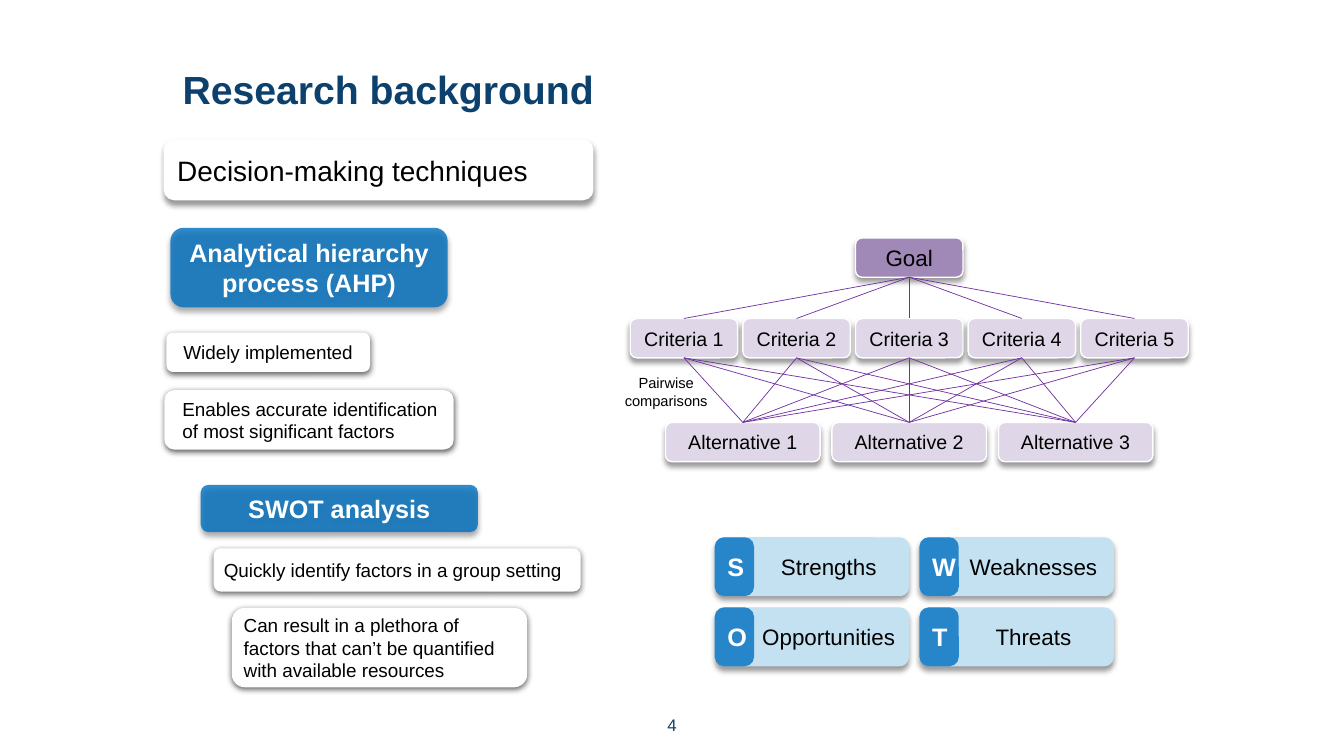
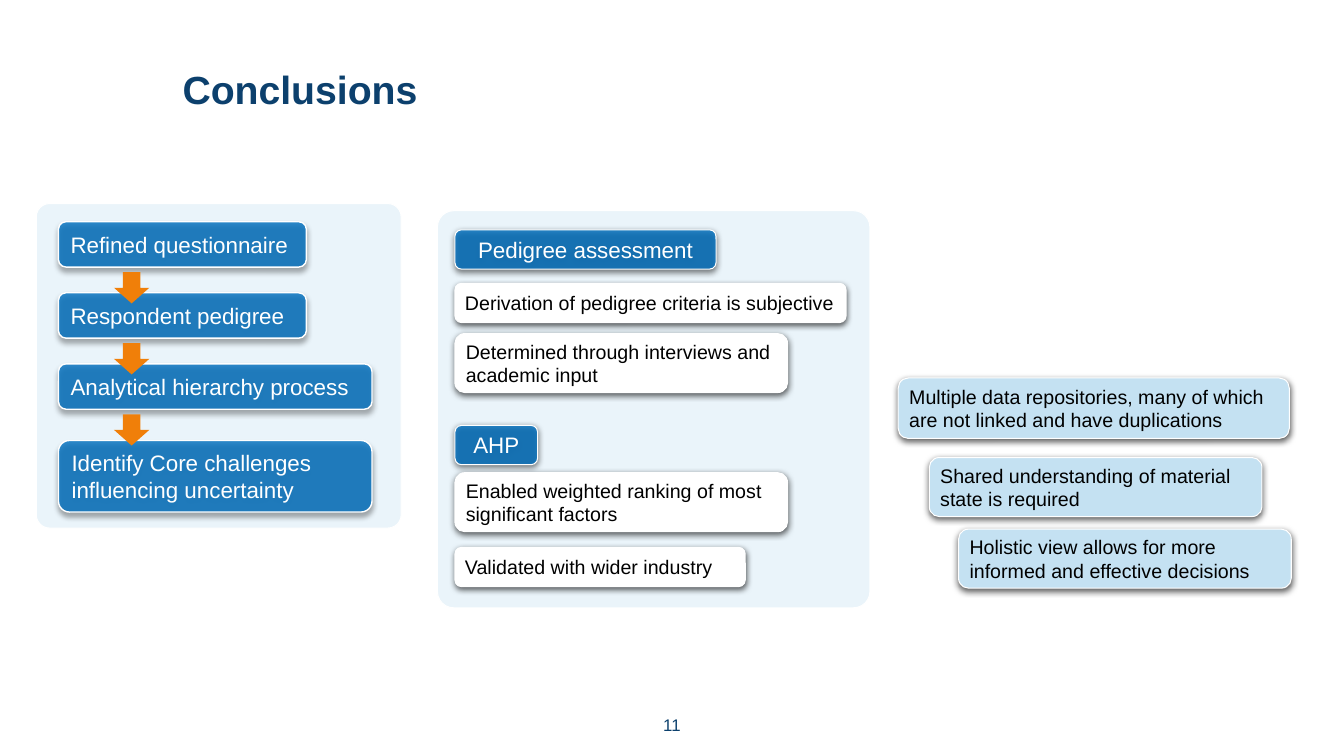
"""Build two slides on decision-making techniques; places are percentages of the slide's size."""
from itertools import product

from lxml import etree
from pptx import Presentation
from pptx import util as u
from pptx.dml.color import RGBColor
from pptx.enum import shapes, text
from pptx.oxml.ns import qn

NAVY, BLUE, PALE_BLUE, PANEL_BLUE = "0C406D", "0070C0", "C4E1F2", "EAF4FA"
PURPLE, MAUVE, LILAC = "7030A0", "A088B7", "DFD7E7"
ORANGE, WHITE, BLACK = "F07F09", "FFFFFF", "000000"
LEFT, CENTRE = text.PP_ALIGN.LEFT, text.PP_ALIGN.CENTER
ROUND, ARROW = shapes.MSO_SHAPE.ROUNDED_RECTANGLE, shapes.MSO_SHAPE.DOWN_ARROW

DEEP = {"alpha": 40, "blur": 4, "distance": 3}
CLOSE = {"alpha": 63, "blur": 4.5, "distance": 1.5}
INSETS = (0.1, 0.05, 0.1, 0.05)
NARROW = (0.08, 0.04, 0.08, 0.04)

TITLE = {"kind": "title", "size": 28, "color": NAVY, "bold": True, "align": LEFT, "spacing": 0.9}
NUMBER = {"kind": "text", "size": 12, "color": NAVY}
WHITE_BOX = {"fill": WHITE, "align": LEFT}
HEADING = WHITE_BOX | {"line": 1, "shadow": DEEP, "size": 20}
CAPTION = {"fill": WHITE, "line": 1, "size": 10.5}
TECHNIQUE = {"fill": BLUE, "opacity": 80, "shadow": DEEP, "size": 18, "color": WHITE, "bold": True}
POINT = WHITE_BOX | {"shadow": CLOSE, "size": 13.5, "insets": (0.15, 0.03, 0.03, 0.03)}
SWOT_POINT = POINT | {"insets": (0.08, 0.03, 0.08, 0.03)}
NODE = {"fill": LILAC, "line": 1, "shadow": DEEP, "size": 14}
GOAL = NODE | {"fill": MAUVE, "size": 16}
SWOT_CARD = {"fill": PALE_BLUE, "shadow": DEEP, "size": 16, "insets": (0.43, 0.05, 0.1, 0.05)}
SWOT_LETTER = TECHNIQUE | {"shadow": None, "corner": 0.239}
PANEL = {"fill": PANEL_BLUE, "line": 0.75, "corner": 0.041}
FINDING = WHITE_BOX | {"line": 0.75, "shadow": CLOSE, "size": 14, "insets": NARROW}
OUTCOME = FINDING | {"fill": PALE_BLUE}
TOPIC = FINDING | {"fill": BLUE, "opacity": 80, "size": 16, "color": WHITE, "align": CENTRE}
STEP = TECHNIQUE | {"line": 1, "size": 16, "bold": False, "align": LEFT}
LAST_STEP = STEP | {"corner": 0.153}
STEP_ARROW = {"kind": ARROW, "fill": ORANGE}

presentation = Presentation()
presentation.slide_width, presentation.slide_height = u.Inches(13.333), u.Inches(7.5)
COLUMN, ROW = presentation.slide_width / 100, presentation.slide_height / 100


def paint(fill, color):
    """Give a shape, line or font fill one solid colour."""
    fill.solid()
    fill.fore_color.rgb = RGBColor.from_string(color)


def add(slide, place, style, words=""):
    """Place one title, text box or shape and dress it in a style."""
    kind = style.get("kind", ROUND)
    if kind == "title":
        shape = slide.shapes.title
    elif kind == "text":
        shape = slide.shapes.add_textbox(0, 0, 0, 0)
    else:
        shape = slide.shapes.add_shape(kind, 0, 0, 0, 0)
        shape.shadow.inherit = False
        paint(shape.fill, style["fill"])
        if "opacity" in style:
            color = shape.fill._xPr.find(".//" + qn("a:srgbClr"))
            etree.SubElement(color, qn("a:alpha"), val=str(style["opacity"] * 1000))
        if "line" in style:
            paint(shape.line.fill, WHITE)
            shape.line.width = u.Pt(style["line"])
        else:
            shape.line.fill.background()
        if "corner" in style:
            shape.adjustments[0] = style["corner"]
        if style.get("shadow"):
            shadow = style["shadow"]
            effects = shape._element.spPr.find(qn("a:effectLst"))
            outer = etree.SubElement(effects, qn("a:outerShdw"), dir="5400000", rotWithShape="0",
                                     blurRad=str(u.Pt(shadow["blur"])), dist=str(u.Pt(shadow["distance"])))
            color = etree.SubElement(outer, qn("a:srgbClr"), val=BLACK)
            etree.SubElement(color, qn("a:alpha"), val=str(shadow["alpha"] * 1000))
    for name, share, unit in zip(("left", "top", "width", "height"), place, (COLUMN, ROW) * 2):
        setattr(shape, name, int(share * unit))
    if words:
        frame, paragraph = shape.text_frame, shape.text_frame.paragraphs[0]
        margins = zip(("left", "top", "right", "bottom"), style.get("insets", INSETS))
        frame_format = {"margin_" + side: u.Inches(inset) for side, inset in margins}
        frame_format |= {"word_wrap": True, "auto_size": text.MSO_AUTO_SIZE.NONE,
                         "vertical_anchor": text.MSO_ANCHOR.MIDDLE}
        paragraph.text = words
        font = paragraph.runs[0].font
        formats = (
            (frame, frame_format),
            (paragraph, {"alignment": style.get("align", CENTRE), "line_spacing": style.get("spacing", 1.0),
                         "space_before": u.Pt(0)}),
            (font, {"name": "Arial", "size": u.Pt(style["size"]), "bold": style.get("bold", False)}),
        )
        for target, values in formats:
            for name, value in values.items():
                setattr(target, name, value)
        paint(font.fill, style.get("color", BLACK))
    return shape


slides = []
for heading, number in (("Research background", "4"), ("Conclusions", "11")):
    slide = presentation.slides.add_slide(presentation.slide_layouts[5])
    add(slide, (12.83, 5.87, 83.85, 12.53), TITLE, heading)
    add(slide, (47.93, 93.47, 4.13, 4.8), NUMBER, number)
    slides.append(slide)
background, conclusions = slides

for place, style, words in (
    ((12.23, 18.53, 31.88, 7.87), HEADING, "Decision-making techniques"),
    ((12.68, 30.13, 20.63, 10.53), TECHNIQUE, "Analytical hierarchy process (AHP)"),
    ((12.38, 44, 15.15, 5.2), POINT, "Widely implemented"),
    ((12.23, 51.6, 21.53, 7.87), POINT, "Enables accurate identification of most significant factors"),
    ((14.93, 64.13, 20.63, 6.27), TECHNIQUE, "SWOT analysis"),
    ((15.9, 72.53, 27.3, 5.73), SWOT_POINT, "Quickly identify factors in a group setting"),
    ((17.25, 80.4, 21.98, 10.53), SWOT_POINT,
     "Can result in a plethora of factors that can’t be quantified with available resources"),
    ((45.45, 49.2, 8.25, 5.2), CAPTION, "Pairwise comparisons"),
):
    add(background, place, style, words)

TREE_CENTRE, NODE_HEIGHT = 67.65, 5.2
levels = []
for labels, style, top, width, pitch in (
    (["Goal"], GOAL, 31.47, 8, 0),
    ([f"Criteria {n}" for n in range(1, 6)], NODE, 42.13, 8, 8.38),
    ([f"Alternative {n}" for n in range(1, 4)], NODE, 55.87, 11.5, 12.38),
):
    first = TREE_CENTRE - width / 2 - pitch * (len(labels) - 1) / 2
    levels.append([add(background, (first + i * pitch, top, width, NODE_HEIGHT), style, label)
                   for i, label in enumerate(labels)])

for upper_level, lower_level in zip(levels, levels[1:]):
    for upper, lower in product(upper_level, lower_level):
        connector = background.shapes.add_connector(shapes.MSO_CONNECTOR.STRAIGHT, 0, 0, 0, 0)
        connector.begin_connect(upper, 2)
        connector.end_connect(lower, 0)
        paint(connector.line.fill, PURPLE)
        connector.line.width = u.Pt(0.5)
        etree.SubElement(connector._element.spPr, qn("a:effectLst"))

for i, word in enumerate(("Strengths", "Weaknesses", "Opportunities", "Threats")):
    left, top = 53.18 + i % 2 * 15.23, 71.07 + i // 2 * 9.27
    add(background, (left, top, 14.48, 7.8), SWOT_CARD, word)
    add(background, (left, top, 2.93, 7.8), SWOT_LETTER, word[0])

for place in ((32.55, 27.87, 32.18, 52.53), (2.7, 26.93, 27.15, 42.93)):
    add(conclusions, place, PANEL)

for place, style, words in (
    ((33.85, 30.4, 19.43, 5.2), TOPIC, "Pedigree assessment"),
    ((33.85, 37.47, 29.1, 5.2), FINDING, "Derivation of pedigree criteria is subjective"),
    ((33.85, 44.13, 24.75, 7.8), FINDING, "Determined through interviews and academic input"),
    ((33.85, 56.27, 6.15, 5.2), TOPIC, "AHP"),
    ((33.85, 62.53, 24.75, 7.8), FINDING, "Enabled weighted ranking of most significant factors"),
    ((33.85, 72.4, 21.6, 5.2), FINDING, "Validated with wider industry"),
    ((66.83, 50, 29.1, 8), OUTCOME,
     "Multiple data repositories, many of which are not linked and have duplications"),
    ((69.15, 60.53, 24.75, 7.8), OUTCOME, "Shared understanding of material state is required"),
    ((71.33, 70, 24.75, 7.8), OUTCOME, "Holistic view allows for more informed and effective decisions"),
):
    add(conclusions, place, style, words)

STEP_LEFT, STEP_TOP, STEP_PITCH = 4.35, 29.33, 9.4
for i, (width, words) in enumerate((
    (18.45, "Refined questionnaire"),
    (18.45, "Respondent pedigree"),
    (23.33, "Analytical hierarchy process"),
)):
    add(conclusions, (STEP_LEFT, STEP_TOP + i * STEP_PITCH, width, 6), STEP, words)
add(conclusions, (STEP_LEFT, 58.27, 23.33, 9.47), LAST_STEP, "Identify Core challenges influencing uncertainty")
for i in range(3):
    add(conclusions, (8.48, STEP_TOP + 6.67 + i * STEP_PITCH, 2.63, 4.13), STEP_ARROW)

presentation.save("out.pptx")
